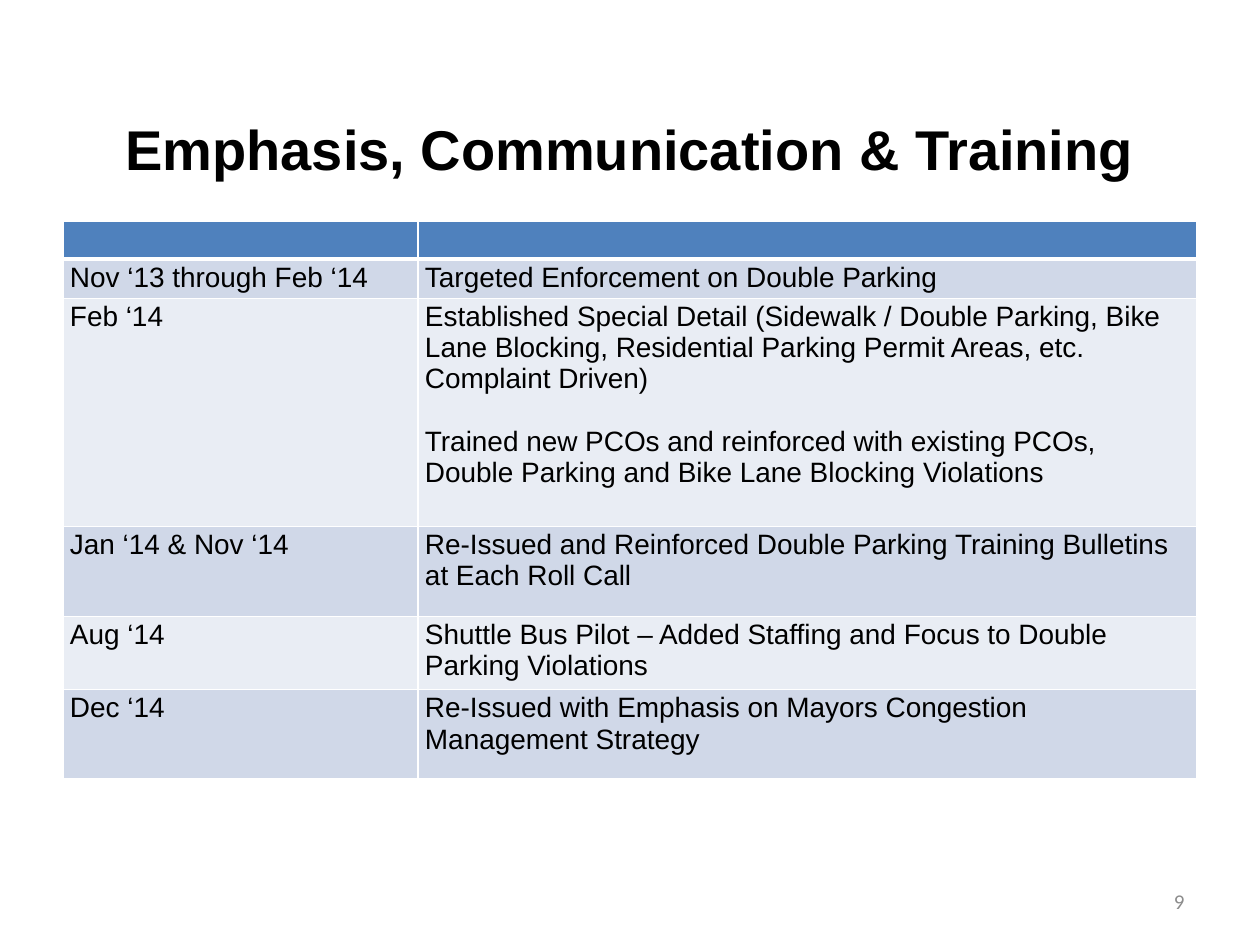
from lxml.etree import SubElement
from pptx import Presentation
from pptx.dml.color import RGBColor
from pptx.enum.text import MSO_ANCHOR, PP_ALIGN
from pptx.oxml.ns import qn
from pptx.util import Pt

PX = 914400 // 126
HUES = {"ink": "000000", "gray": "8C8C8C", "head": "4F81BD",
        "dark": "D0D8E8", "pale": "E9EDF4", "rule": "FFFFFF"}
TITLE = {"name": "Arial", "size": Pt(32), "bold": True}
BODY = {"name": "Arial", "size": Pt(16)}
FOOT = {"name": "Calibri", "size": Pt(12)}
COLS = [355, 779]
ROWS = [
    (38, "head", [], []),
    (38, "dark", ["Nov ‘13 through Feb ‘14"],
     ["Targeted Enforcement on Double Parking"]),
    (228, "pale", ["Feb ‘14"],
     ["Established Special Detail (Sidewalk / Double Parking, Bike Lane "
      "Blocking, Residential Parking Permit Areas, etc. Complaint Driven)",
      "Trained new PCOs and reinforced with existing PCOs, Double Parking "
      "and Bike Lane Blocking Violations"]),
    (90, "dark", ["Jan ‘14 & Nov ‘14"],
     ["Re-Issued and Reinforced Double Parking Training Bulletins "
      "at Each Roll Call"]),
    (73, "pale", ["Aug ‘14"],
     ["Shuttle Bus Pilot – Added Staffing and Focus to Double "
      "Parking Violations"]),
    (89, "dark", ["Dec ‘14"],
     ["Re-Issued with Emphasis on Mayors Congestion Management Strategy"]),
]


def paint(part, hue):
    part.solid()
    part.fore_color.rgb = RGBColor.from_string(HUES[hue])


def style(item, values):
    for key, value in values.items():
        setattr(item, key, value)


def write(para, text, form, hue):
    run = para.add_run()
    run.text = text
    style(run.font, form)
    paint(run.font.fill, hue)


def label(slide, box, text, form, hue, align):
    frame = slide.shapes.add_textbox(*[n * PX for n in box]).text_frame
    style(frame, {"word_wrap": True, "vertical_anchor": MSO_ANCHOR.MIDDLE})
    para = frame.paragraphs[0]
    para.alignment = align
    write(para, text, form, hue)


def edge(cell, row):
    props = cell._tc.get_or_add_tcPr()
    for side in "LRTB":
        thick = (row, side) in ((0, "B"), (1, "T"))
        line = SubElement(props, qn("a:ln" + side), w=str(Pt(3 if thick else 1)))
        fill = SubElement(line, qn("a:solidFill"))
        SubElement(fill, qn("a:srgbClr"), val=HUES["rule"])


def fill_cell(cell, row, hue, texts):
    edge(cell, row)
    paint(cell.fill, hue)
    style(cell, {"margin_left": 7 * PX, "margin_right": 7 * PX,
                 "margin_top": 3 * PX, "margin_bottom": 3 * PX})
    frame = cell.text_frame
    if not texts:
        frame.paragraphs[0]._p.get_or_add_endParaRPr().set("sz", "1400")
    for i, text in enumerate(texts):
        para = frame.add_paragraph() if i else frame.paragraphs[0]
        if i:
            para.space_before = Pt(18)
        write(para, text, BODY, "ink")


def grid(slide, left, top):
    high = sum(row[0] for row in ROWS)
    box = [n * PX for n in (left, top, sum(COLS), high)]
    table = slide.shapes.add_table(len(ROWS), len(COLS), *box).table
    for col, wide in zip(table.columns, COLS):
        col.width = wide * PX
    for i, (tall, hue, *cells) in enumerate(ROWS):
        table.rows[i].height = tall * PX
        for j, texts in enumerate(cells):
            fill_cell(table.cell(i, j), i, hue, texts)


def main():
    deck = Presentation()
    style(deck, {"slide_width": 1260 * PX, "slide_height": 945 * PX})
    slide = deck.slides.add_slide(deck.slide_layouts[6])
    label(slide, (63, 101, 1134, 95), "Emphasis, Communication & Training",
          TITLE, "ink", PP_ALIGN.CENTER)
    label(slide, (903, 876, 294, 50), "9", FOOT, "gray", PP_ALIGN.RIGHT)
    grid(slide, 63, 221)
    deck.save("out.pptx")


if __name__ == "__main__":
    main()
